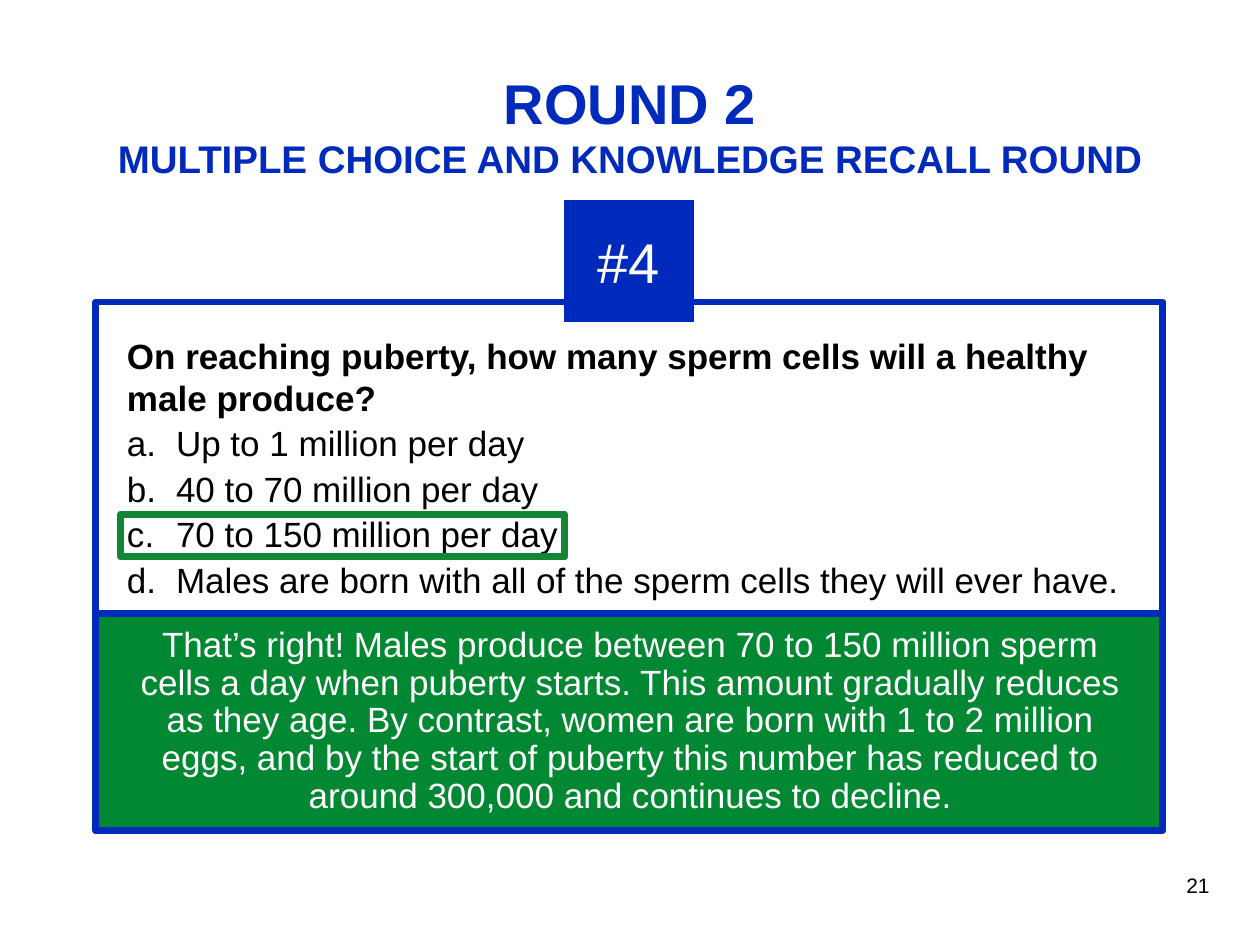
"""Build the quiz slide for question four of round two."""
import dataclasses
from typing import Optional

import pptx
import pptx.dml.color
import pptx.enum.shapes
import pptx.enum.text
import pptx.oxml.ns
import pptx.util
from lxml import etree

EMU_PER_PX = 914400 / 126
COLOURS = {
    "blue": "002ABB",
    "green": "028732",
    "outline": "128636",
    "white": "FFFFFF",
    "black": "000000",
}
CENTER = pptx.enum.text.PP_ALIGN.CENTER
LEFT = pptx.enum.text.PP_ALIGN.LEFT
TOP = pptx.enum.text.MSO_ANCHOR.TOP
MIDDLE = pptx.enum.text.MSO_ANCHOR.MIDDLE
INSET = 6
OPTION_INDENT = 49

QUESTION = "On reaching puberty, how many sperm cells will a healthy male produce?"
OPTIONS = [
    "Up to 1 million per day",
    "40 to 70 million per day",
    "70 to 150 million per day",
    "Males are born with all of the sperm cells they will ever have.",
]
EXPLANATION = (
    "That’s right! Males produce between 70 to 150 million sperm cells a day when "
    "puberty starts. This amount gradually reduces as they age. By contrast, women "
    "are born with 1 to 2 million eggs, and by the start of puberty this number has "
    "reduced to around 300,000 and continues to decline."
)


@dataclasses.dataclass(frozen=True)
class Area:
    left: int
    top: int
    width: int
    height: int

    def emu(self) -> list[int]:
        return [px(value) for value in dataclasses.astuple(self)]


@dataclasses.dataclass(frozen=True)
class Box:
    area: Area
    fill: Optional[str] = None
    line: Optional[str] = None


QUESTION_PANEL = Box(Area(96, 302, 1067, 362), "white", "blue")
NUMBER_BADGE = Box(Area(564, 200, 130, 122), "blue")
ANSWER_PANEL = Box(Area(96, 614, 1067, 217), "green", "blue")
CORRECT_OPTION = Box(Area(121, 514, 444, 43), line="outline")
TITLE_AREA = Area(63, 47, 1134, 156)
QUESTION_AREA = Area(121, 328, 1042, 281)
ANSWER_AREA = Area(122, 621, 1017, 204)
PAGE_NUMBER_AREA = Area(1137, 851, 122, 69)


def px(value: int) -> int:
    return round(value * EMU_PER_PX)


def rgb(name: str) -> pptx.dml.color.RGBColor:
    return pptx.dml.color.RGBColor.from_string(COLOURS[name])


def draw_box(slide, box: Box):
    shape = slide.shapes.add_shape(
        pptx.enum.shapes.MSO_SHAPE.RECTANGLE, *box.area.emu()
    )
    shape.shadow.inherit = False
    if box.fill:
        shape.fill.solid()
        shape.fill.fore_color.rgb = rgb(box.fill)
    else:
        shape.fill.background()
    if box.line:
        shape.line.color.rgb = rgb(box.line)
        shape.line.width = pptx.util.Pt(4)
    else:
        shape.line.fill.background()
    return shape


def prepare_frame(shape, anchor=TOP):
    frame = shape.text_frame
    frame.word_wrap = True
    frame.auto_size = pptx.enum.text.MSO_AUTO_SIZE.NONE
    frame.vertical_anchor = anchor
    frame.margin_left = frame.margin_right = px(INSET)
    frame.margin_top = frame.margin_bottom = px(INSET)
    return frame


def add_text_frame(slide, area: Area, anchor=TOP):
    return prepare_frame(slide.shapes.add_textbox(*area.emu()), anchor)


def write(paragraph, text: str, *, size: int = 20, colour: str = "black",
          bold: bool = False, align=LEFT) -> None:
    paragraph.alignment = align
    run = paragraph.add_run()
    run.text = text
    run.font.name = "Arial"
    run.font.size = pptx.util.Pt(size)
    run.font.bold = bold
    run.font.color.rgb = rgb(colour)


def letter_option(paragraph) -> None:
    properties = paragraph._p.get_or_add_pPr()
    properties.set("marL", str(px(OPTION_INDENT)))
    properties.set("indent", str(-px(OPTION_INDENT)))
    bullet = etree.SubElement(properties, pptx.oxml.ns.qn("a:buAutoNum"))
    bullet.set("type", "alphaLcPeriod")


def draw_title(slide) -> None:
    title = slide.shapes.title
    title.left, title.top, title.width, title.height = TITLE_AREA.emu()
    paragraph = prepare_frame(title, MIDDLE).paragraphs[0]
    write(paragraph, "ROUND 2", size=32, colour="blue", bold=True, align=CENTER)
    paragraph.add_line_break()
    write(paragraph, "MULTIPLE CHOICE AND KNOWLEDGE RECALL ROUND",
          size=22, colour="blue", bold=True, align=CENTER)


def draw_question(slide) -> None:
    draw_box(slide, QUESTION_PANEL)
    frame = add_text_frame(slide, QUESTION_AREA)
    write(frame.paragraphs[0], QUESTION, bold=True)
    for option in OPTIONS:
        paragraph = frame.add_paragraph()
        letter_option(paragraph)
        write(paragraph, option)
    for paragraph in frame.paragraphs:
        paragraph.space_after = pptx.util.Pt(2)
    badge_frame = prepare_frame(draw_box(slide, NUMBER_BADGE), MIDDLE)
    write(badge_frame.paragraphs[0], "#4", size=32, colour="white", align=CENTER)


def draw_answer(slide) -> None:
    draw_box(slide, ANSWER_PANEL)
    paragraph = add_text_frame(slide, ANSWER_AREA).paragraphs[0]
    paragraph.line_spacing = 0.9
    write(paragraph, EXPLANATION, colour="white", align=CENTER)
    draw_box(slide, CORRECT_OPTION)


def main() -> None:
    presentation = pptx.Presentation()
    presentation.slide_width = px(1260)
    presentation.slide_height = px(945)
    slide = presentation.slides.add_slide(presentation.slide_layouts[5])
    draw_title(slide)
    draw_question(slide)
    page_number = add_text_frame(slide, PAGE_NUMBER_AREA, MIDDLE)
    write(page_number.paragraphs[0], "21", size=12, align=CENTER)
    draw_answer(slide)
    presentation.save("out.pptx")


if __name__ == "__main__":
    main()
